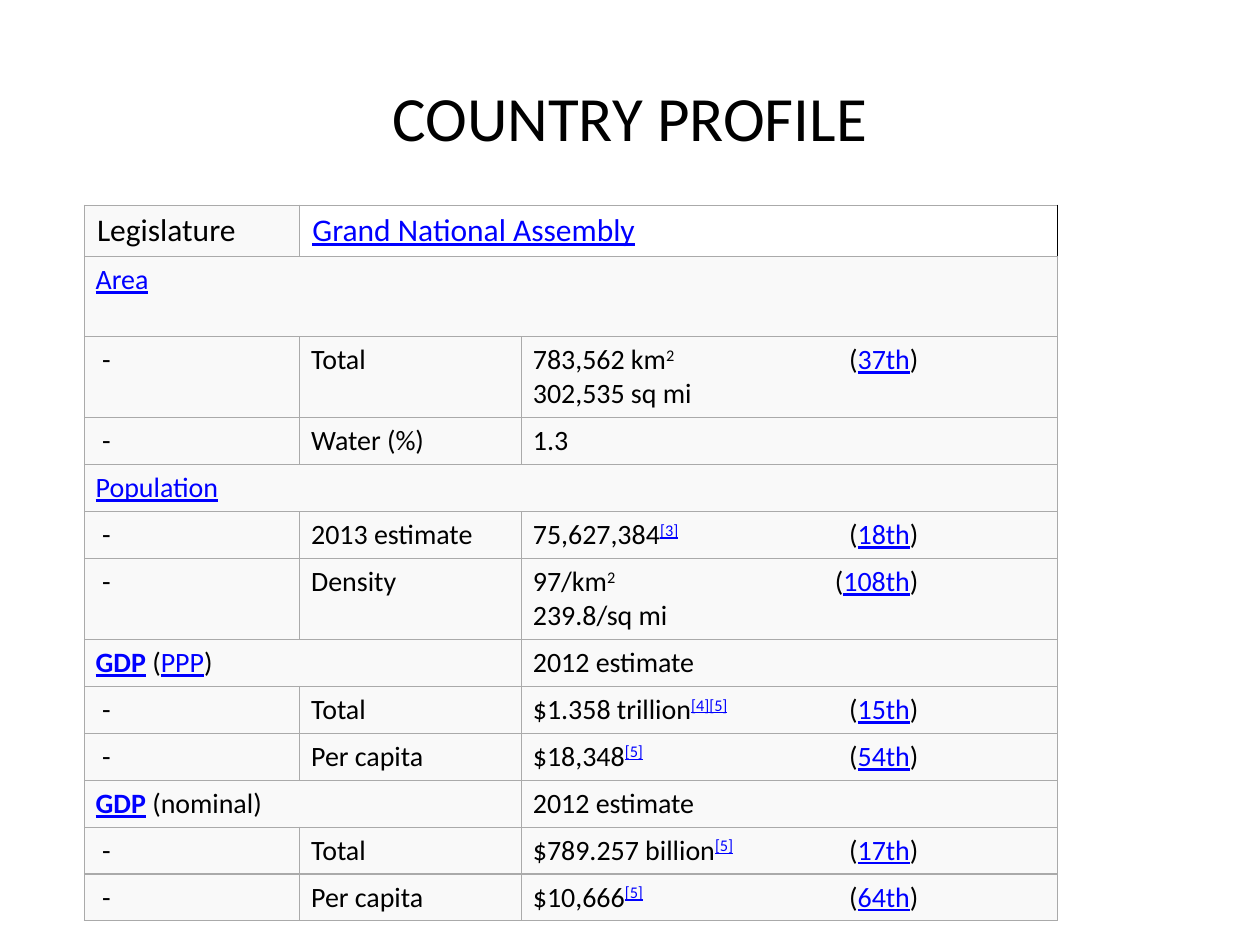
from lxml import etree
from pptx import Presentation
from pptx.dml.color import RGBColor
from pptx.enum.text import MSO_ANCHOR, PP_ALIGN
from pptx.oxml.ns import qn
from pptx.util import Inches, Pt

CENTER = PP_ALIGN.CENTER
MIDDLE = MSO_ANCHOR.MIDDLE
BLACK = RGBColor(0x00, 0x00, 0x00)
LINK_BLUE = RGBColor(0x00, 0x00, 0xFF)
CELL_GRAY = RGBColor(0xF9, 0xF9, 0xF9)
BORDER_GRAY = RGBColor(0xAA, 0xAA, 0xAA)

SLIDE_W, SLIDE_H = Inches(10), Inches(7.5)
TITLE_BOX = (0.05, 0.04, 0.9, 0.167)
TABLE_BOX = (0.067, 0.217, 0.772, 0.733)
COLUMNS = (1.71, 1.76, 4.25)
SINGLE, DOUBLE, HEADER, SECTION = 0.34, 0.59, 0.38, 0.64
RANK_TAB = 3.06

PLAIN = {"bold": False, "underline": False}
LINK = {"underline": True}
BOLD_LINK = {"bold": True, "underline": True}
CELL_MARGINS = {
    "margin_left": Inches(0.09), "margin_right": Inches(0.09),
    "margin_top": Inches(0.05), "margin_bottom": Inches(0.05),
}


def set_attributes(target, values):
    """Assign each value in the dict to the target's attribute."""
    for name, value in values.items():
        setattr(target, name, value)


def measure(box):
    """Turn shares of the slide into left, top, width and height."""
    return [round(share * side) for share, side in zip(box, (SLIDE_W, SLIDE_H) * 2)]


def metric(label, value, unit="", refs="", rank="", second_line=""):
    """Return the three cells of one measured figure."""
    figure = [(value, PLAIN, 0)]
    if unit:
        figure.append((unit, PLAIN, 30))
    if refs:
        figure.append((refs, LINK, 30))
    if rank:
        figure += [("\t(", PLAIN, 0), (rank, LINK, 0), (")", PLAIN, 0)]
    if second_line:
        figure += [("\n", PLAIN, 0), (second_line, PLAIN, 0)]
    return {0: [(" - ", PLAIN, 0)], 1: [(label, PLAIN, 0)], 2: figure}


def section(heading):
    """Return a heading cell that spans the table."""
    return {0: [(heading, LINK, 0)]}


def gdp(*basis):
    """Return a GDP heading over two columns and its year."""
    return {0: [("GDP", BOLD_LINK, 0), *basis], 2: [("2012 estimate", PLAIN, 0)]}


PROFILE = [
    (HEADER, {0: [("Legislature", PLAIN, 0)], 1: [("Grand National Assembly", LINK, 0)]}),
    (SECTION, section("Area")),
    (DOUBLE, metric("Total", "783,562 km", "2", rank="37th", second_line="302,535 sq mi")),
    (SINGLE, metric("Water (%)", "1.3")),
    (SINGLE, section("Population")),
    (SINGLE, metric("2013 estimate", "75,627,384", refs="[3]", rank="18th")),
    (DOUBLE, metric("Density", "97/km", "2", rank="108th", second_line="239.8/sq mi")),
    (SINGLE, gdp((" (", PLAIN, 0), ("PPP", LINK, 0), (")", PLAIN, 0))),
    (SINGLE, metric("Total", "$1.358 trillion", refs="[4][5]", rank="15th")),
    (SINGLE, metric("Per capita", "$18,348", refs="[5]", rank="54th")),
    (SINGLE, gdp((" (nominal)", PLAIN, 0))),
    (SINGLE, metric("Total", "$789.257 billion", refs="[5]", rank="17th")),
    (SINGLE, metric("Per capita", "$10,666", refs="[5]", rank="64th")),
]


def draw_borders(cell, right_color):
    """Give the cell four thin border lines."""
    properties = cell._tc.get_or_add_tcPr()
    for side in ("lnL", "lnR", "lnT", "lnB"):
        line = etree.SubElement(properties, qn(f"a:{side}"), w=str(Pt(0.75)))
        fill = etree.SubElement(line, qn("a:solidFill"))
        color = right_color if side == "lnR" else BORDER_GRAY
        etree.SubElement(fill, qn("a:srgbClr"), val=str(color))


def add_rank_tab(paragraph):
    """Set the right-aligned tab stop that lines up the ranks."""
    tabs = etree.SubElement(paragraph._p.get_or_add_pPr(), qn("a:tabLst"))
    etree.SubElement(tabs, qn("a:tab"), pos=str(Inches(RANK_TAB)), algn="r")


def write_cell(cell, pieces, size):
    """Write the styled pieces of text into the cell."""
    paragraph = cell.text_frame.paragraphs[0]
    if any("\t" in text for text, _, _ in pieces):
        add_rank_tab(paragraph)
    for text, style, raised in pieces:
        if text == "\n":
            paragraph.add_line_break()
            continue
        run = paragraph.add_run()
        run.text = text
        set_attributes(run.font, {"name": "Calibri", "size": Pt(size), **style})
        run.font.color.rgb = LINK_BLUE if style.get("underline") else BLACK
        if raised:
            run._r.get_or_add_rPr().set("baseline", str(raised * 1000))


def add_title(slide, box):
    """Place the slide title in the given box."""
    title = slide.shapes.title
    set_attributes(title, dict(zip(("left", "top", "width", "height"), measure(box))))
    title.text_frame.text = "COUNTRY PROFILE"
    title.text_frame.vertical_anchor = MIDDLE
    paragraph = title.text_frame.paragraphs[0]
    paragraph.alignment = CENTER
    set_attributes(paragraph.font, {"name": "Calibri", "size": Pt(36)})
    paragraph.font.color.rgb = BLACK


def add_profile(slide, box):
    """Place the table of country figures in the given box."""
    left, top, width, height = measure(box)
    table = slide.shapes.add_table(len(PROFILE), len(COLUMNS), left, top, width, height).table
    set_attributes(table, {"first_row": False, "horz_banding": False})
    for column, share in zip(table.columns, COLUMNS):
        column.width = round(width * share / sum(COLUMNS))
    for index, (row_height, contents) in enumerate(PROFILE):
        is_header = index == 0
        table.rows[index].height = Inches(row_height)
        for position in range(len(COLUMNS)):
            cell = table.cell(index, position)
            is_open = is_header and position > 0
            draw_borders(cell, BLACK if is_open and position == 2 or is_open else BORDER_GRAY)
            if is_open:
                cell.fill.background()
            else:
                cell.fill.solid()
                cell.fill.fore_color.rgb = CELL_GRAY
            if not is_header:
                set_attributes(cell, CELL_MARGINS)
        starts = sorted(contents)
        for start, end in zip(starts, starts[1:] + [len(COLUMNS)]):
            cell = table.cell(index, start)
            if end - start > 1:
                cell.merge(table.cell(index, end - 1))
            write_cell(cell, contents[start], 18 if is_header else 16)


def main():
    """Build the country profile slide and save it."""
    presentation = Presentation()
    set_attributes(presentation, {"slide_width": SLIDE_W, "slide_height": SLIDE_H})
    slide = presentation.slides.add_slide(presentation.slide_layouts[5])
    add_title(slide, TITLE_BOX)
    add_profile(slide, TABLE_BOX)
    presentation.save("out.pptx")


if __name__ == "__main__":
    main()
